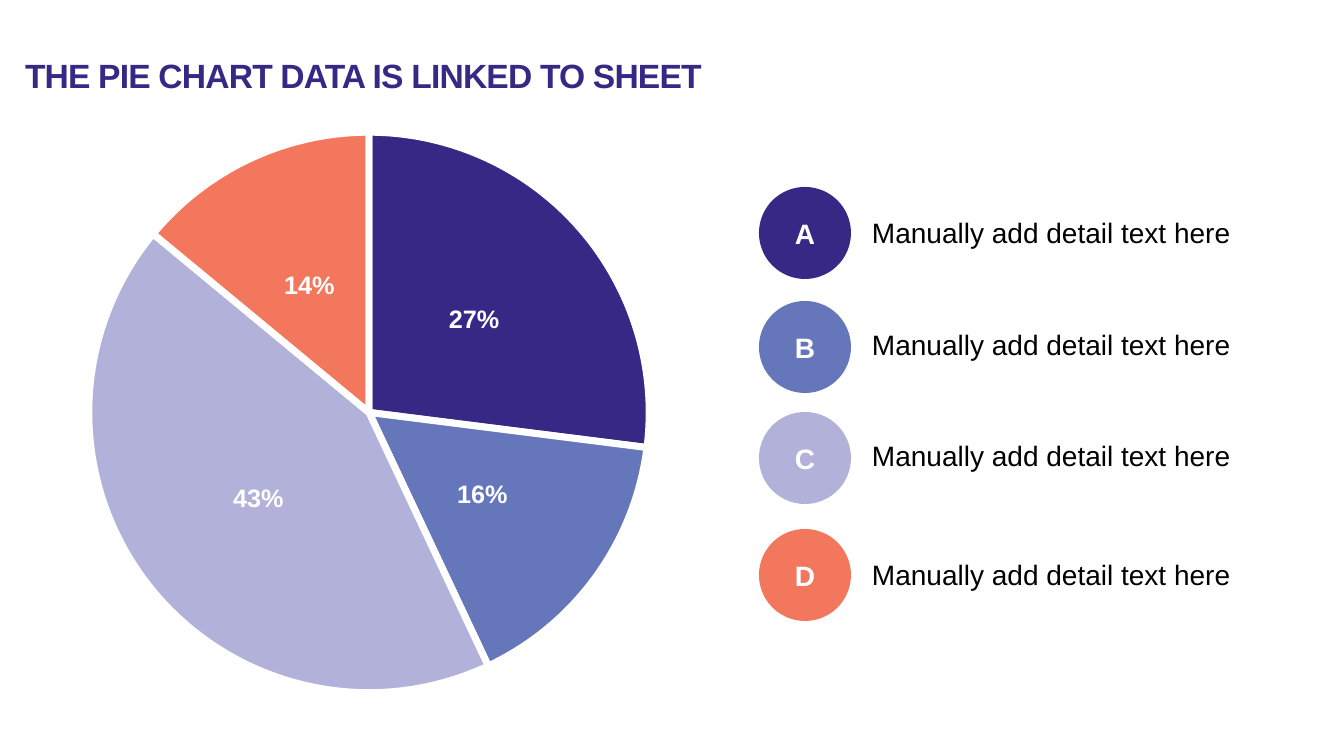
from lxml import etree
from pptx import Presentation
from pptx.chart.data import CategoryChartData
from pptx.dml.color import RGBColor
from pptx.enum.chart import XL_CHART_TYPE as Chart, XL_LABEL_POSITION as LabelPos
from pptx.enum.shapes import MSO_SHAPE as Shape
from pptx.enum.text import MSO_ANCHOR as Anchor, MSO_AUTO_SIZE as AutoSize, PP_ALIGN as Align
from pptx.oxml import parse_xml
from pptx.oxml.ns import nsdecls
from pptx.util import Pt

INDIGO = RGBColor(0x38, 0x28, 0x86)
BLUE = RGBColor(0x65, 0x77, 0xBA)
LILAC = RGBColor(0xB2, 0xB1, 0xD9)
CORAL = RGBColor(0xF3, 0x77, 0x5C)
WHITE = RGBColor(0xFF, 0xFF, 0xFF)
BLACK = RGBColor(0, 0, 0)

# Content
TITLE = "THE PIE CHART DATA IS LINKED TO SHEET"
DETAIL = "Manually add detail text here"
# letter, pie value, colour, circle top, detail top
SEGMENTS = [
    ("A", 27, INDIGO, 187, 211),
    ("B", 16, BLUE, 301, 323),
    ("C", 43, LILAC, 412, 434),
    ("D", 14, CORAL, 529, 553),
]

# Geometry in px
SLIDE_W, SLIDE_H = 1344, 756
TITLE_BOX = (25, 59, 1159, 95)
PIE_BOX = (74, 116, 590, 593)
PIE_SHARE = 0.95
CIRCLE_LEFT, CIRCLE_SIZE = 759, 92
DETAIL_LEFT, DETAIL_W, DETAIL_H = 862, 416, 44

# Text formats
TITLE_FONT = {"name": "Arial", "size": Pt(24), "bold": True}
PIE_FONT = {"name": "Lato", "size": Pt(28)}
PERCENT_FONT = {"name": "Arial", "size": Pt(18), "bold": True}
LETTER_FONT = {"name": "Arial", "size": Pt(20), "bold": True}
DETAIL_FONT = {"name": "Arial", "size": Pt(20), "bold": False}


def px(*lengths):
    return [round(length * 914400 / 100.8) for length in lengths]


def style(font, values, color):
    for name, value in values.items():
        setattr(font, name, value)
    font.color.rgb = color


def write(frame, text, values, color, align=Align.LEFT):
    paragraph = frame.paragraphs[0]
    paragraph.alignment = align
    run = paragraph.add_run()
    run.text = text
    style(run.font, values, color)
    return run


prs = Presentation()
prs.slide_width, prs.slide_height = px(SLIDE_W, SLIDE_H)
slide = prs.slides.add_slide(prs.slide_layouts[5])
shapes = slide.shapes

# Title
title = shapes.title
title.left, title.top, title.width, title.height = px(*TITLE_BOX)
heading = title.text_frame
for name, value in {
    "margin_left": 0, "margin_top": 0, "margin_right": 0, "margin_bottom": Pt(3.6),
    "vertical_anchor": Anchor.TOP, "auto_size": AutoSize.NONE, "word_wrap": True,
}.items():
    setattr(heading, name, value)
heading_run = write(heading, TITLE, TITLE_FONT, INDIGO)
heading_run.font._element.set("spc", "-60")
heading.paragraphs[0].line_spacing = 0.9

# Pie chart
pie_data = CategoryChartData()
pie_data.categories = [str(number) for number in range(1, len(SEGMENTS) + 1)]
pie_data.add_series("Series 1", [segment[1] for segment in SEGMENTS])
pie = shapes.add_chart(Chart.PIE, *px(*PIE_BOX), pie_data).chart
pie.has_legend = False
pie.has_title = False
style(pie.font, PIE_FONT, WHITE)
plot = pie.plots[0]
plot.vary_by_categories = True
for index, (_, _, color, _, _) in enumerate(SEGMENTS):
    slice_format = plot.series[0].points[index].format
    slice_format.fill.solid()
    slice_format.fill.fore_color.rgb = color
    slice_format.line.color.rgb = WHITE
    slice_format.line.width = Pt(5)

# Percent labels
plot.has_data_labels = True
percents = plot.data_labels
for name, value in {
    "show_percentage": True, "show_value": False, "number_format": "0%",
    "number_format_is_linked": False, "position": LabelPos.CENTER,
}.items():
    setattr(percents, name, value)
style(percents.font, PERCENT_FONT, WHITE)

# Centred plot area
plot_area = pie._chartSpace.chart.plotArea
for layout in plot_area.findall("c:layout", plot_area.nsmap):
    plot_area.remove(layout)
layout = parse_xml(f"<c:layout {nsdecls('c')}><c:manualLayout/></c:layout>")
margin = round((1 - PIE_SHARE) / 2, 3)
for tag, value in [("layoutTarget", "inner"), ("xMode", "edge"), ("yMode", "edge"),
                   ("x", margin), ("y", margin), ("w", PIE_SHARE), ("h", PIE_SHARE)]:
    etree.SubElement(layout[0], f"{{{layout.nsmap['c']}}}{tag}").set("val", str(value))
plot_area.insert(0, layout)

# Lettered key
for letter, _, color, circle_top, detail_top in SEGMENTS:
    circle = shapes.add_shape(
        Shape.OVAL, *px(CIRCLE_LEFT, circle_top, CIRCLE_SIZE, CIRCLE_SIZE))
    circle.shadow.inherit = False
    circle.fill.solid()
    circle.fill.fore_color.rgb = color
    circle.line.fill.background()
    circle.text_frame.vertical_anchor = Anchor.MIDDLE
    write(circle.text_frame, letter, LETTER_FONT, WHITE, Align.CENTER)

    detail = shapes.add_textbox(*px(DETAIL_LEFT, detail_top, DETAIL_W, DETAIL_H)).text_frame
    detail.word_wrap = True
    detail.auto_size = AutoSize.SHAPE_TO_FIT_TEXT
    write(detail, DETAIL, DETAIL_FONT, BLACK)

prs.save("out.pptx")
